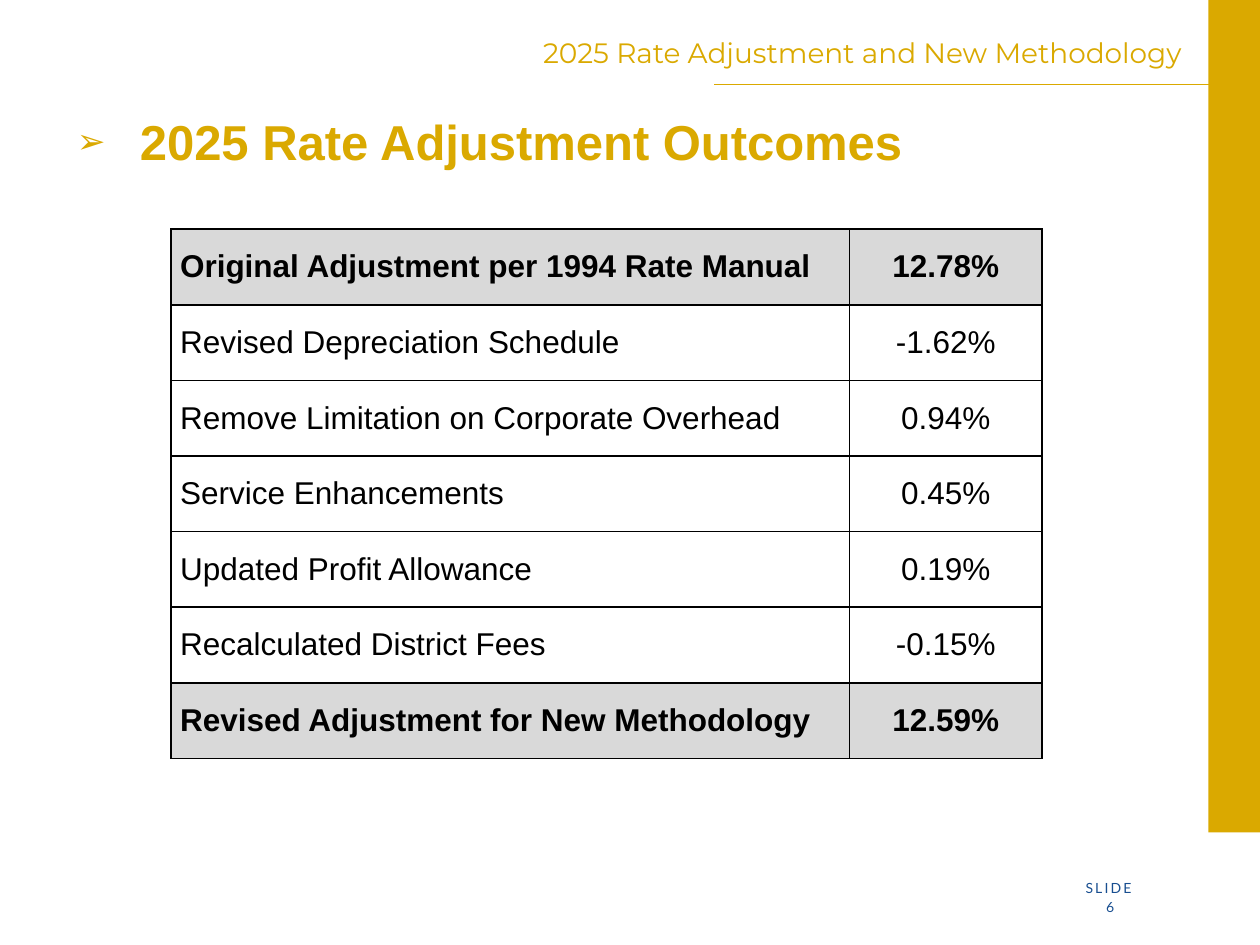
import pptx
import pptx.util
import pptx.dml.color
import pptx.enum.shapes
import pptx.enum.text
import pptx.oxml.ns
from lxml import etree

Cm, Pt = pptx.util.Cm, pptx.util.Pt
Align = pptx.enum.text.PP_ALIGN

GOLD, BLUE, BLACK, GREY = "DAA900", "184E90", "000000", "D9D9D9"
TITLE = "2025 Rate Adjustment and New Methodology"
HEADING = "2025 Rate Adjustment Outcomes"
OUTCOMES = [
    ("Original Adjustment per 1994 Rate Manual", "12.78%"),
    ("Revised Depreciation Schedule", "-1.62%"),
    ("Remove Limitation on Corporate Overhead", "0.94%"),
    ("Service Enhancements", "0.45%"),
    ("Updated Profit Allowance", "0.19%"),
    ("Recalculated District Fees", "-0.15%"),
    ("Revised Adjustment for New Methodology", "12.59%"),
]
COLUMN_WIDTHS = (13.67, 3.89)
COLUMN_ALIGNS = (Align.JUSTIFY, Align.CENTER)
ROW_HEIGHT = 1.524


def color(value):
    return pptx.dml.color.RGBColor.from_string(value)


def add_xml(parent, tag, **attributes):
    return etree.SubElement(parent, pptx.oxml.ns.qn(tag), attributes)


def add_bullet(para, character, shade, percent, indent):
    properties = para._p.get_or_add_pPr()
    properties.set("marL", str(Cm(indent)))
    properties.set("indent", str(-Cm(indent)))
    add_xml(add_xml(properties, "a:buClr"), "a:srgbClr", val=shade)
    add_xml(properties, "a:buSzPct", val=str(percent * 1000))
    add_xml(properties, "a:buFont", typeface="Arial")
    add_xml(properties, "a:buChar", char=character)


def write(frame, text, *, size, font, shade, bold=False, align=Align.LEFT,
          line_spacing=None, tracking=None, bullet=None):
    para = frame.paragraphs[0]
    para.alignment = align
    if bullet:
        add_bullet(para, bullet, shade, 70, 1.27)
    if line_spacing:
        para.line_spacing = line_spacing
    span = para.add_run()
    span.text = text
    span.font.size = Pt(size)
    span.font.name = font
    span.font.bold = bold
    span.font.color.rgb = color(shade)
    if tracking:
        span.font._element.set("spc", str(round(tracking * 100)))


def add_text(page, place, text, *, insets=(0.25, 0.13), **style):
    box = page.shapes.add_textbox(*map(Cm, place))
    frame = box.text_frame
    frame.word_wrap = True
    frame.margin_left = frame.margin_right = Cm(insets[0])
    frame.margin_top = frame.margin_bottom = Cm(insets[1])
    write(frame, text, **style)


def add_borders(cell):
    properties = cell._tc.get_or_add_tcPr()
    for position, side in enumerate(("a:lnL", "a:lnR", "a:lnT", "a:lnB")):
        line = etree.Element(pptx.oxml.ns.qn(side), w=str(Pt(1)))
        add_xml(add_xml(line, "a:solidFill"), "a:srgbClr", val=BLACK)
        properties.insert(position, line)


def add_outcomes(page):
    table = page.shapes.add_table(
        len(OUTCOMES), len(COLUMN_WIDTHS), Cm(3.45), Cm(4.62),
        Cm(sum(COLUMN_WIDTHS)), Cm(ROW_HEIGHT * len(OUTCOMES))).table
    for column, width in zip(table.columns, COLUMN_WIDTHS):
        column.width = Cm(width)
    for row, entries in enumerate(OUTCOMES):
        table.rows[row].height = Cm(ROW_HEIGHT)
        total = row in (0, len(OUTCOMES) - 1)
        for column, text in enumerate(entries):
            cell = table.cell(row, column)
            cell.vertical_anchor = pptx.enum.text.MSO_ANCHOR.MIDDLE
            cell.margin_left = cell.margin_right = Cm(0.18)
            cell.margin_top = cell.margin_bottom = 0
            if total:
                cell.fill.solid()
                cell.fill.fore_color.rgb = color(GREY)
            else:
                cell.fill.background()
            add_borders(cell)
            write(cell.text_frame, text, size=18, font="Arial", shade=BLACK,
                  bold=total, align=COLUMN_ALIGNS[column])


def add_frame(page):
    bar = page.shapes.add_shape(pptx.enum.shapes.MSO_SHAPE.RECTANGLE,
                                Cm(24.36), 0, Cm(1.04), Cm(16.78))
    bar.shadow.inherit = False
    bar.fill.solid()
    bar.fill.fore_color.rgb = color(GOLD)
    bar.line.fill.background()

    footer = dict(size=8, font="Lato", shade=BLUE, tracking=1.2)
    add_text(page, (20.8, 17.6, 2.26, 0.61), "SLIDE", align=Align.RIGHT, **footer)
    add_text(page, (22.02, 17.96, 1.73, 0.91), "6", insets=(0.28, 0.15), **footer)

    rule = page.shapes.add_connector(pptx.enum.shapes.MSO_CONNECTOR.STRAIGHT,
                                     Cm(14.4), Cm(1.7), Cm(24.43), Cm(1.7))
    rule.line.color.rgb = color(GOLD)
    rule.line.width = Pt(0.5)
    add_xml(rule._element.spPr, "a:effectLst")


def main():
    deck = pptx.Presentation()
    deck.slide_width, deck.slide_height = Cm(25.4), Cm(19.05)
    page = deck.slides.add_slide(deck.slide_layouts[6])
    add_frame(page)
    add_text(page, (1.3, 2.26, 22.35, 10.77), HEADING, size=28, font="Arial",
             shade=GOLD, bold=True, line_spacing=0.9, bullet="➢")
    add_text(page, (0.36, 0.66, 23.72, 1.6), TITLE, size=16, font="Montserrat",
             shade=GOLD, align=Align.RIGHT, line_spacing=0.9)
    add_outcomes(page)
    deck.save("out.pptx")


if __name__ == "__main__":
    main()
